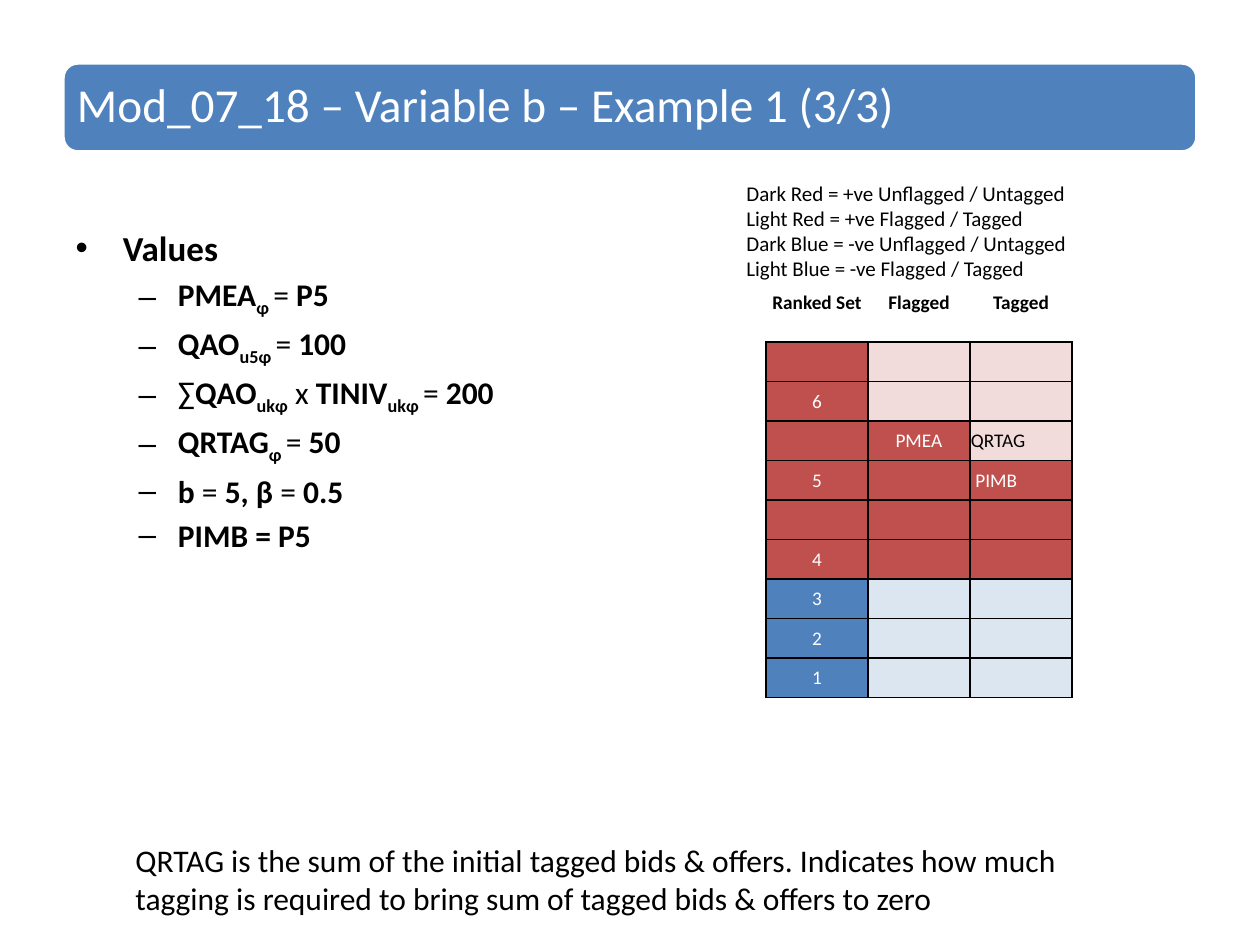
from dataclasses import dataclass

from lxml.etree import SubElement
from pptx import Presentation
from pptx.dml.color import RGBColor
from pptx.enum.shapes import MSO_SHAPE as Shape
from pptx.enum.text import MSO_ANCHOR as Anchor, MSO_AUTO_SIZE as AutoSize, PP_ALIGN as Align
from pptx.oxml.ns import qn
from pptx.util import Emu, Pt


@dataclass(frozen=True)
class Theme:
    font: str = "Calibri"
    black: str = "000000"
    white: str = "FFFFFF"
    dark_red: str = "C0504D"
    light_red: str = "F2DCDB"
    dark_blue: str = "4F81BD"
    light_blue: str = "DCE6F1"
    title: int = 27
    heading: int = 20
    body: int = 18
    legend: int = 12
    cell: int = 11


THEME = Theme()
NO_STYLE = "{2D5ABB26-0587-4C30-8999-92F81FD0307C}"
BANNER = (63, 63, 1134, 89)

BOLD, PLAIN, SUB = "bold", "plain", "sub"
EQUALS = ("=", PLAIN)
VALUES = [
    [("PMEA", BOLD), ("φ ", SUB), EQUALS, (" P5", BOLD)],
    [("QAO", BOLD), ("u5φ ", SUB), EQUALS, (" 100", BOLD)],
    [("∑", PLAIN), ("QAO", BOLD), ("ukφ", SUB), (" x ", PLAIN),
     ("TINIV", BOLD), ("ukφ ", SUB), EQUALS, (" 200", BOLD)],
    [("QRTAG", BOLD), ("φ ", SUB), EQUALS, (" 50", BOLD)],
    [("b ", BOLD), EQUALS, (" 5, β ", BOLD), EQUALS, (" 0.5", BOLD)],
    [("PIMB = P5", BOLD)],
]
LEGEND = [
    "Dark Red = +ve Unflagged / Untagged",
    "Light Red = +ve Flagged / Tagged",
    "Dark Blue = -ve Unflagged / Untagged",
    "Light Blue = -ve Flagged / Tagged",
]
NOTE = ("QRTAG is the sum of the initial tagged bids & offers. Indicates how much "
        "tagging is required to bring sum of tagged bids & offers to zero")

HEADERS = ("Ranked Set", "Flagged", "Tagged")
EMPTY = ("", "", "")
ALL_RED = (THEME.dark_red,) * 3
POSITIVE = (THEME.dark_red, THEME.light_red, THEME.light_red)
NEGATIVE = (THEME.dark_blue, THEME.light_blue, THEME.light_blue)
# Each ranked set is a band of one or two table rows: (texts, fills).
BANDS = [
    [(EMPTY, POSITIVE), (("6", "", ""), POSITIVE)],
    [(("", "PMEA", "QRTAG"), (THEME.dark_red, THEME.dark_red, THEME.light_red)),
     (("5", "", " PIMB"), ALL_RED)],
    [(EMPTY, ALL_RED), (("4", "", ""), ALL_RED)],
    *[[((label, "", ""), NEGATIVE)] for label in "321"],
]
FIRST_BAND_ROW, ROW_COUNT = 2, 18
ROW_HEIGHT, COLUMN_WIDTH = 27, 102


def px(length):
    return Emu(round(length * 914400 / 126))


def place(shape, box):
    shape.left, shape.top, shape.width, shape.height = map(px, box)


def format_font(font, size, color=THEME.black, bold=False):
    font.name, font.size, font.bold = THEME.font, Pt(size), bold
    font.color.rgb = RGBColor.from_string(color)


def add_title(slide, text):
    title = slide.shapes.title
    banner = slide.shapes.add_shape(Shape.ROUNDED_RECTANGLE, *map(px, BANNER))
    banner.shadow.inherit = False
    banner.fill.solid()
    banner.fill.fore_color.rgb = RGBColor.from_string(THEME.dark_blue)
    banner.line.color.rgb = RGBColor.from_string(THEME.white)
    banner.line.width = Pt(2)
    title._element.addprevious(banner._element)

    place(title, BANNER)
    frame = title.text_frame
    frame.text = text
    frame.vertical_anchor = Anchor.MIDDLE
    frame.margin_left = frame.margin_right = frame.margin_top = frame.margin_bottom = px(14)
    paragraph = frame.paragraphs[0]
    paragraph.alignment = Align.LEFT
    paragraph.line_spacing = 0.9
    format_font(paragraph.runs[0].font, THEME.title, THEME.white)


def add_values(slide, heading, lines):
    body = slide.placeholders[1]
    place(body, (63, 220, 706, 624))
    frame = body.text_frame
    frame.text = heading
    format_font(frame.paragraphs[0].runs[0].font, THEME.heading, bold=True)
    for line in lines:
        paragraph = frame.add_paragraph()
        paragraph.level = 1
        for text, style in line:
            run = paragraph.add_run()
            run.text = text
            format_font(run.font, THEME.body, bold=style != PLAIN)
            if style == SUB:
                run._r.get_or_add_rPr().set("baseline", "-25000")


def add_text(slide, box, lines, size):
    frame = slide.shapes.add_textbox(*map(px, box)).text_frame
    frame.word_wrap = True
    frame.auto_size = AutoSize.SHAPE_TO_FIT_TEXT
    frame.text = "\n".join(lines)
    for paragraph in frame.paragraphs:
        format_font(paragraph.runs[0].font, size)


def add_borders(cell, sides):
    properties = cell._tc.get_or_add_tcPr()
    for side in sides:
        line = SubElement(properties, qn(f"a:ln{side}"), w=str(Pt(1)))
        fill = SubElement(line, qn("a:solidFill"))
        SubElement(fill, qn("a:srgbClr"), val=THEME.black)


def write_cell(cell, text, color, bold=False, alignment=Align.CENTER):
    cell.text = text
    paragraph = cell.text_frame.paragraphs[0]
    paragraph.alignment = alignment
    for run in paragraph.runs:
        format_font(run.font, THEME.cell, color, bold)


def fill_band_cell(cell, text, fill, sides, alignment):
    add_borders(cell, sides)
    cell.fill.solid()
    cell.fill.fore_color.rgb = RGBColor.from_string(fill)
    is_light = fill in (THEME.light_red, THEME.light_blue)
    write_cell(cell, text, THEME.black if is_light else THEME.white, alignment=alignment)


def add_empty_table(slide):
    """Add an unstyled grid whose blank cells are small enough for its rows."""
    columns = len(HEADERS)
    table = slide.shapes.add_table(
        ROW_COUNT, columns, px(766), px(288),
        px(columns * COLUMN_WIDTH), px(ROW_COUNT * ROW_HEIGHT)).table
    table.first_row = table.horz_banding = False
    table._tbl.tblPr.find(qn("a:tableStyleId")).text = NO_STYLE
    for column in table.columns:
        column.width = px(COLUMN_WIDTH)
    for row in table.rows:
        row.height = px(ROW_HEIGHT)
    for cell in table.iter_cells():
        cell.margin_left = cell.margin_right = cell.margin_top = px(1)
        cell.margin_bottom = 0
        cell.vertical_anchor = Anchor.MIDDLE
        end = cell.text_frame.paragraphs[0]._p.get_or_add_endParaRPr()
        end.set("sz", str(THEME.cell * 100))
    return table


def add_ranked_sets(slide):
    table = add_empty_table(slide)
    for column, header in enumerate(HEADERS):
        cell = table.cell(0, column)
        cell.vertical_anchor = Anchor.BOTTOM
        write_cell(cell, header, THEME.black, bold=True)

    row = FIRST_BAND_ROW
    for band in BANDS:
        for index, (texts, fills) in enumerate(band):
            sides = "LR" + "T" * (index == 0) + "B" * (index == len(band) - 1)
            for column, (text, fill) in enumerate(zip(texts, fills)):
                alignment = Align.LEFT if column == 2 else Align.CENTER
                fill_band_cell(table.cell(row, column), text, fill, sides, alignment)
            row += 1


def main():
    presentation = Presentation()
    presentation.slide_width, presentation.slide_height = px(1260), px(945)
    slide = presentation.slides.add_slide(
        presentation.slide_layouts.get_by_name("Title and Content"))
    add_title(slide, "Mod_07_18 – Variable b – Example 1 (3/3)")
    add_values(slide, "Values", VALUES)
    add_ranked_sets(slide)
    add_text(slide, (123, 835, 989, 89), [NOTE], THEME.body)
    add_text(slide, (734, 174, 404, 115), LEGEND, THEME.legend)
    presentation.save("out.pptx")


if __name__ == "__main__":
    main()
